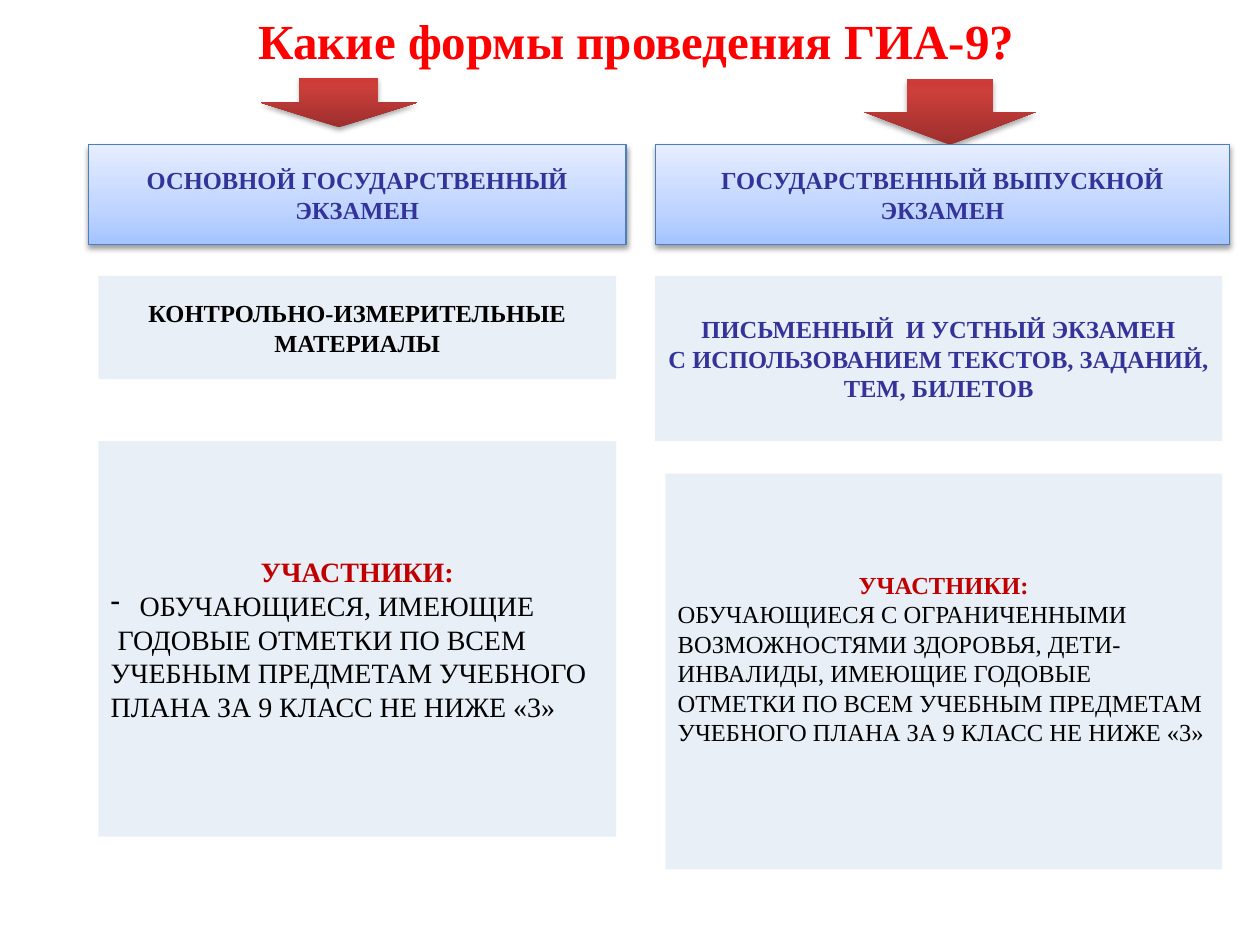
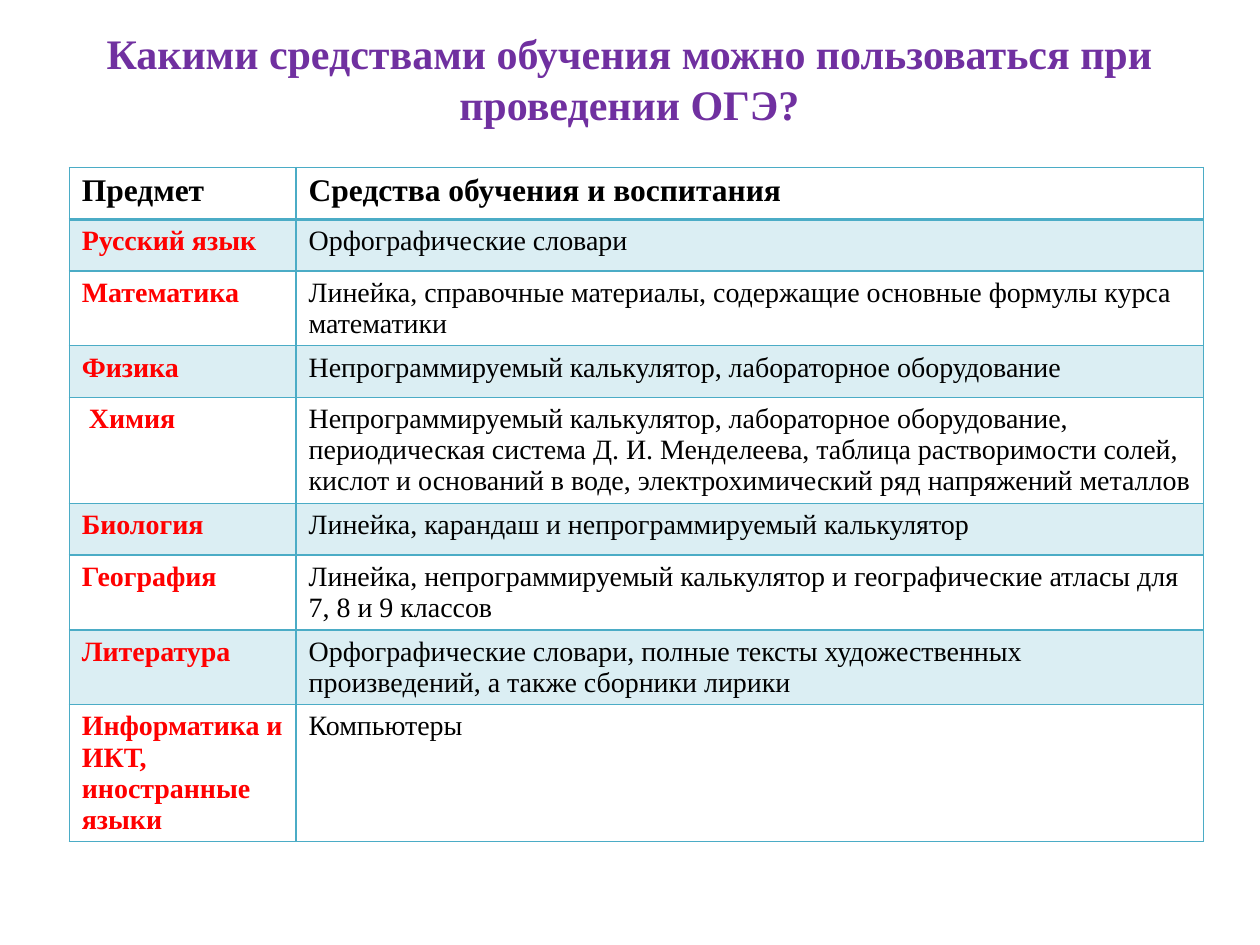
"""Build two slides on the forms of the GIA-9 exam and the learning aids allowed in it."""
from typing import NamedTuple, Optional

from lxml.etree import SubElement
from pptx import Presentation
from pptx.dml.color import RGBColor
from pptx.enum.shapes import MSO_SHAPE
from pptx.enum.text import MSO_ANCHOR, MSO_AUTO_SIZE, PP_ALIGN
from pptx.oxml import parse_xml
from pptx.oxml.ns import nsdecls, qn
from pptx.util import Inches, Pt

SLIDE_WIDTH, SLIDE_HEIGHT = Inches(10), Inches(7.5)
FONT = "Times New Roman"

BLACK = RGBColor(0x00, 0x00, 0x00)
RED = RGBColor(0xFF, 0x00, 0x00)
DARK_RED = RGBColor(0xC0, 0x00, 0x00)
PURPLE = RGBColor(0x70, 0x30, 0xA0)
INDIGO = RGBColor(0x33, 0x33, 0x99)
PALE_BLUE = RGBColor(0xB9, 0xCD, 0xE5)
OUTLINE = RGBColor(0x4B, 0x7E, 0xBC)
TEAL = RGBColor(0x4B, 0xAC, 0xC6)

RED_STOPS = (
    (0, RGBColor(0x9C, 0x2F, 0x2D)),
    (80, RGBColor(0xCB, 0x3E, 0x3A)),
    (100, RGBColor(0xCE, 0x3B, 0x37)),
)
BLUE_STOPS = (
    (0, RGBColor(0xA4, 0xC4, 0xFF)),
    (35, RGBColor(0xBF, 0xD4, 0xFF)),
    (100, RGBColor(0xE6, 0xEE, 0xFF)),
)


class Area(NamedTuple):
    """A place in percent of the slide's width and height."""
    left: float
    top: float
    width: float
    height: float

    def lengths(self) -> tuple:
        """Return left, top, width and height as slide lengths."""
        sizes = (SLIDE_WIDTH, SLIDE_HEIGHT) * 2
        return tuple(round(size * share / 100) for size, share in zip(sizes, self))


class Line(NamedTuple):
    """One paragraph and its format."""
    text: str
    size: float = 14
    color: RGBColor = BLACK
    bold: bool = False
    align: PP_ALIGN = PP_ALIGN.CENTER
    bullet: Optional[str] = None


class Panel(NamedTuple):
    """A pale rectangle with text."""
    area: Area
    lines: tuple
    bottom_inset: float = 0.05


class Form(NamedTuple):
    """An exam form: arrow, heading and the panels below."""
    arrow: Area
    heading_area: Area
    heading: str
    panels: tuple


HEADING_TOP, HEADING_HEIGHT = 15.33, 10.53
MATERIALS_TOP, PARTICIPANTS_HEIGHT = 29.2, 41.87

FORMS = (
    Form(
        Area(20.7, 8.27, 12.4, 5.2),
        Area(7, HEADING_TOP, 42.7, HEADING_HEIGHT),
        "ОСНОВНОЙ ГОСУДАРСТВЕННЫЙ ЭКЗАМЕН",
        (
            Panel(
                Area(7.8, MATERIALS_TOP, 41.1, 10.93),
                (Line("КОНТРОЛЬНО-ИЗМЕРИТЕЛЬНЫЕ МАТЕРИАЛЫ", bold=True),),
            ),
            Panel(
                Area(7.8, 46.67, 41.1, PARTICIPANTS_HEIGHT),
                (
                    Line("УЧАСТНИКИ:", 16, DARK_RED, True),
                    Line("ОБУЧАЮЩИЕСЯ, ИМЕЮЩИЕ", 16, align=PP_ALIGN.LEFT, bullet="-"),
                    Line(" ГОДОВЫЕ ОТМЕТКИ ПО ВСЕМ УЧЕБНЫМ ПРЕДМЕТАМ УЧЕБНОГО "
                         "ПЛАНА ЗА 9 КЛАСС НЕ НИЖЕ «3»", 16, align=PP_ALIGN.LEFT),
                ),
            ),
        ),
    ),
    Form(
        Area(68.6, 8.4, 13.6, 6.93),
        Area(52, HEADING_TOP, 45.6, HEADING_HEIGHT),
        "ГОСУДАРСТВЕННЫЙ ВЫПУСКНОЙ ЭКЗАМЕН",
        (
            Panel(
                Area(52, MATERIALS_TOP, 45, 17.47),
                (
                    Line("ПИСЬМЕННЫЙ  И УСТНЫЙ ЭКЗАМЕН", color=INDIGO, bold=True),
                    Line("С ИСПОЛЬЗОВАНИЕМ ТЕКСТОВ, ЗАДАНИЙ, ТЕМ, БИЛЕТОВ",
                         color=INDIGO, bold=True),
                ),
            ),
            Panel(
                Area(52.8, 50.13, 44.2, PARTICIPANTS_HEIGHT),
                (
                    Line("УЧАСТНИКИ:", color=DARK_RED, bold=True),
                    Line("ОБУЧАЮЩИЕСЯ С ОГРАНИЧЕННЫМИ ВОЗМОЖНОСТЯМИ ЗДОРОВЬЯ, "
                         "ДЕТИ-ИНВАЛИДЫ, ИМЕЮЩИЕ ГОДОВЫЕ ОТМЕТКИ ПО ВСЕМ УЧЕБНЫМ "
                         "ПРЕДМЕТАМ УЧЕБНОГО ПЛАНА ЗА 9 КЛАСС НЕ НИЖЕ «3»",
                         align=PP_ALIGN.LEFT),
                ),
                bottom_inset=0.26,
            ),
        ),
    ),
)

AIDS = (
    ("Предмет", "Средства обучения и воспитания"),
    ("Русский язык", "Орфографические словари"),
    ("Математика", "Линейка, справочные материалы, содержащие основные формулы "
                   "курса математики"),
    ("Физика", "Непрограммируемый калькулятор, лабораторное оборудование"),
    (" Химия", "Непрограммируемый калькулятор, лабораторное оборудование, "
               "периодическая система Д. И. Менделеева, таблица растворимости солей, "
               "кислот и оснований в воде, электрохимический ряд напряжений металлов"),
    ("Биология", "Линейка, карандаш и непрограммируемый калькулятор"),
    ("География", "Линейка, непрограммируемый калькулятор и географические атласы "
                  "для 7, 8 и 9 классов"),
    ("Литература", "Орфографические словари, полные тексты художественных "
                   "произведений, а также сборники лирики"),
    ("Информатика и ИКТ, иностранные языки", "Компьютеры"),
)
AIDS_AREA = Area(5.5, 17.73, 90, 49.2)
SUBJECT_SHARE = 0.2


def write(paragraph, text: str, *, size: float, color: RGBColor, bold: bool = False,
          align: PP_ALIGN = PP_ALIGN.LEFT, bullet: Optional[str] = None) -> None:
    """Put formatted text into a paragraph."""
    paragraph.alignment = align
    if bullet:
        properties = paragraph._p.get_or_add_pPr()
        properties.set("marL", str(Inches(0.23)))
        properties.set("indent", str(-Inches(0.23)))
        SubElement(properties, qn("a:buChar"), char=bullet)
    run = paragraph.add_run()
    run.text = text
    font = run.font
    font.name, font.size, font.bold = FONT, Pt(size), bold
    font.color.rgb = color


def write_lines(frame, lines: tuple) -> None:
    """Fill a text frame with one paragraph per line."""
    frame.word_wrap = True
    frame.vertical_anchor = MSO_ANCHOR.MIDDLE
    for index, line in enumerate(lines):
        paragraph = frame.add_paragraph() if index else frame.paragraphs[0]
        write(paragraph, **line._asdict())


def tint(fill, properties, color: RGBColor, opacity: int) -> None:
    """Set a solid fill with an opacity in percent."""
    fill.solid()
    fill.fore_color.rgb = color
    shade = properties.find(f"{qn('a:solidFill')}/{qn('a:srgbClr')}")
    SubElement(shade, qn("a:alpha"), val=str(opacity * 1000))


def add_block(slide, kind: MSO_SHAPE, area: Area):
    """Add a preset shape with no line and no shadow."""
    shape = slide.shapes.add_shape(kind, *area.lengths())
    shape.shadow.inherit = False
    shape.line.fill.background()
    return shape


def add_raised_block(slide, kind: MSO_SHAPE, area: Area, stops: tuple,
                     distance: float, opacity: int):
    """Add a shape with an upward gradient and a soft shadow below."""
    shape = add_block(slide, kind, area)
    shape.fill.gradient()
    shape.fill.gradient_angle = 90
    properties = shape._element.spPr
    stop_list = properties.find(f"{qn('a:gradFill')}/{qn('a:gsLst')}")
    stop_list.clear()
    for position, color in stops:
        stop = SubElement(stop_list, qn("a:gs"), pos=str(position * 1000))
        SubElement(stop, qn("a:srgbClr"), val=str(color))
    properties.find(qn("a:effectLst")).append(parse_xml(
        f'<a:outerShdw {nsdecls("a")} blurRad="{Pt(3.1)}" dist="{Pt(distance)}" '
        f'dir="5400000" rotWithShape="0"><a:srgbClr val="{BLACK}">'
        f'<a:alpha val="{opacity * 1000}"/></a:srgbClr></a:outerShdw>'))
    return shape


def add_titled_slide(presentation, text: str, area: Area, size: float, color: RGBColor):
    """Add a title-only slide and format its title."""
    slide = presentation.slides.add_slide(presentation.slide_layouts[5])
    title = slide.shapes.title
    title.left, title.top, title.width, title.height = area.lengths()
    title.text_frame.auto_size = MSO_AUTO_SIZE.NONE
    write_lines(title.text_frame, (Line(text, size, color, True),))
    return slide


def add_form(slide, form: Form) -> None:
    """Draw one exam form from its arrow down to its panels."""
    add_raised_block(slide, MSO_SHAPE.DOWN_ARROW, form.arrow, RED_STOPS, 1.8, 35)
    heading = add_raised_block(slide, MSO_SHAPE.RECTANGLE, form.heading_area,
                               BLUE_STOPS, 1.6, 38)
    heading.line.color.rgb = OUTLINE
    heading.line.width = Pt(0.75)
    write_lines(heading.text_frame, (Line(form.heading, color=INDIGO, bold=True),))
    for panel in form.panels:
        block = add_block(slide, MSO_SHAPE.RECTANGLE, panel.area)
        tint(block.fill, block._element.spPr, PALE_BLUE, 31)
        block.text_frame.margin_bottom = Inches(panel.bottom_inset)
        write_lines(block.text_frame, panel.lines)


def set_borders(cell, top: float, bottom: float) -> None:
    """Draw the four borders of a cell, the sides one point wide."""
    properties = cell._tc.get_or_add_tcPr()
    widths = {"lnL": 1, "lnR": 1, "lnT": top, "lnB": bottom}
    for index, (side, width) in enumerate(widths.items()):
        properties.insert(index, parse_xml(
            f'<a:{side} {nsdecls("a")} w="{Pt(width)}"><a:solidFill>'
            f'<a:srgbClr val="{TEAL}"/></a:solidFill></a:{side}>'))


def add_aids_table(slide) -> None:
    """Add the table of subjects and permitted learning aids."""
    left, top, width, height = AIDS_AREA.lengths()
    table = slide.shapes.add_table(len(AIDS), 2, left, top, width, height).table
    table.horz_banding = False
    table.columns[0].width = round(width * SUBJECT_SHARE)
    table.columns[1].width = width - table.columns[0].width
    for row_index, texts in enumerate(AIDS):
        is_header = row_index == 0
        table.rows[row_index].height = Inches(0.41)
        for column_index, text in enumerate(texts):
            is_subject = column_index == 0
            cell = table.cell(row_index, column_index)
            if row_index % 2:
                tint(cell.fill, cell._tc.get_or_add_tcPr(), TEAL, 20)
            else:
                cell.fill.background()
            set_borders(cell, top=2 if row_index == 1 else 1, bottom=2 if is_header else 1)
            write(cell.text_frame.paragraphs[0], text, size=18 if is_header else 16,
                  color=RED if is_subject and not is_header else BLACK,
                  bold=is_header or is_subject)


def main() -> None:
    """Build and save the presentation."""
    presentation = Presentation()
    presentation.slide_width, presentation.slide_height = SLIDE_WIDTH, SLIDE_HEIGHT
    forms_slide = add_titled_slide(presentation, "Какие формы проведения ГИА-9?",
                                   Area(5.5, 0, 90, 8.53), 28, RED)
    for form in FORMS:
        add_form(forms_slide, form)
    aids_slide = add_titled_slide(
        presentation, "Какими средствами обучения можно пользоваться при проведении ОГЭ?",
        Area(5, 1.87, 89.9, 12.8), 24, PURPLE)
    add_aids_table(aids_slide)
    presentation.save("out.pptx")


if __name__ == "__main__":
    main()
